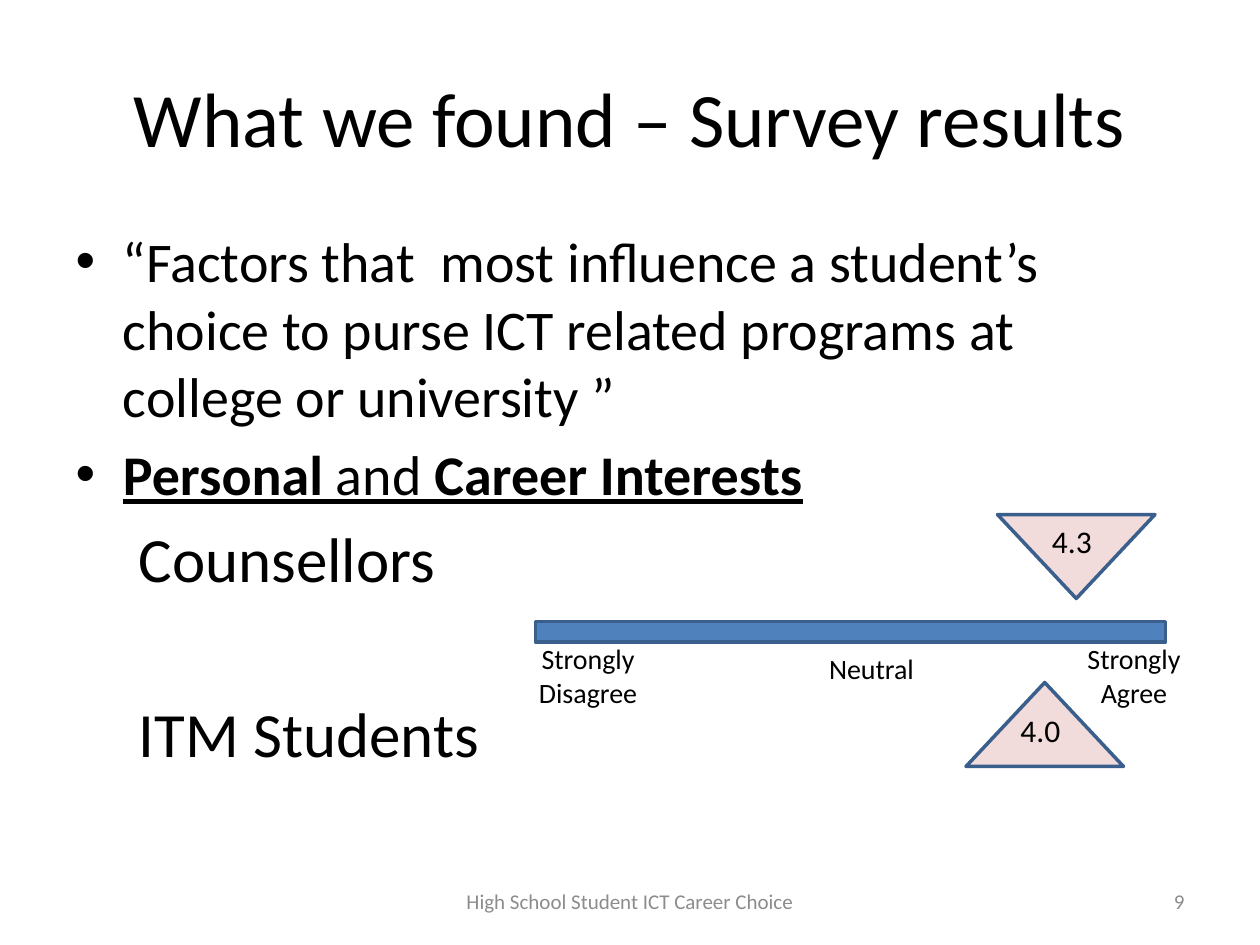
"""Build the survey results slide with its rating scale."""
from pptx import Presentation
from pptx.dml.color import RGBColor
from pptx.enum import shapes, text
from pptx.util import Pt

CENTER, LEFT, RIGHT = text.PP_ALIGN.CENTER, text.PP_ALIGN.LEFT, text.PP_ALIGN.RIGHT
TOP, MIDDLE = text.MSO_ANCHOR.TOP, text.MSO_ANCHOR.MIDDLE


def color(fmt, value):
    fmt.rgb = RGBColor.from_string(value)


def add_run(p, words, size, ink="000000", bold=None, underline=None):
    r = p.add_run()
    r.text = words
    r.font.name = "Calibri"
    r.font.size = Pt(size)
    r.font.bold = bold
    r.font.underline = underline
    color(r.font.color, ink)


prs = Presentation()
prs.slide_width, prs.slide_height = Pt(720), Pt(540)
s = prs.slides.add_slide(prs.slide_layouts[1])
title, body = s.placeholders

boxes = [(title, 36, 21.6, 648, 90), (body, 36, 126, 648, 356.4)]
for sp, left, top, width, height in boxes:
    sp.left, sp.top, sp.width, sp.height = Pt(left), Pt(top), Pt(width), Pt(height)
    sp.text_frame.auto_size = text.MSO_AUTO_SIZE.NONE

p = title.text_frame.paragraphs[0]
p.alignment = CENTER
add_run(p, "What we found – Survey results", 44)

tf = body.text_frame
p = tf.paragraphs[0]
add_run(p, "“Factors that  most influence a student’s choice to purse ICT related "
           "programs at college or university ”", 32)
p = tf.add_paragraph()
for words, bold in [("Personal", True), (" and ", False), ("Career Interests", True)]:
    add_run(p, words, 32, bold=bold, underline=True)
for group, gap in [("Counsellors", 7), ("ITM Students", 57)]:
    p = tf.add_paragraph()
    p.level = 1
    p.space_before = Pt(gap)
    p._p.get_or_add_pPr().insert_element_before(
        p._p.makeelement("{http://schemas.openxmlformats.org/drawingml/2006/main}buNone", {}),
        "a:tabLst", "a:defRPr", "a:extLst")
    add_run(p, group, 36)

RECT = shapes.MSO_SHAPE.RECTANGLE
TRIANGLE = shapes.MSO_SHAPE.ISOSCELES_TRIANGLE
scale = [
    (RECT, 306, 355, 360, 12, "4F81BD", 0),
    (TRIANGLE, 552, 390, 90, 48, "F2DCDB", 0),
    (TRIANGLE, 570, 294, 90, 48, "F2DCDB", 180),
]
for kind, left, top, width, height, fill, turn in scale:
    sp = s.shapes.add_shape(kind, Pt(left), Pt(top), Pt(width), Pt(height))
    sp.shadow.inherit = False
    sp.rotation = turn
    sp.fill.solid()
    color(sp.fill.fore_color, fill)
    color(sp.line.color, "3A5F8C")
    sp.line.width = Pt(2)

labels = [
    ("Strongly Disagree", 294, 363, 84, 46, 16, CENTER, TOP, "000000"),
    ("Neutral", 456, 369, 84, 27, 16, CENTER, TOP, "000000"),
    ("Strongly Agree", 606, 363, 84, 46, 16, CENTER, TOP, "000000"),
    ("4.3", 594, 295, 48, 29, 18, LEFT, TOP, "000000"),
    ("4.0", 576, 403, 48, 29, 18, LEFT, TOP, "000000"),
    ("High School Student ICT Career Choice", 246, 500.5, 228, 28.75, 12, CENTER, MIDDLE, "8C8C8C"),
    ("9", 516, 500.5, 168, 28.75, 12, RIGHT, MIDDLE, "8C8C8C"),
]
for words, left, top, width, height, size, align, anchor, ink in labels:
    tf = s.shapes.add_textbox(Pt(left), Pt(top), Pt(width), Pt(height)).text_frame
    tf.word_wrap = True
    tf.vertical_anchor = anchor
    p = tf.paragraphs[0]
    p.alignment = align
    add_run(p, words, size, ink)

prs.save("out.pptx")
